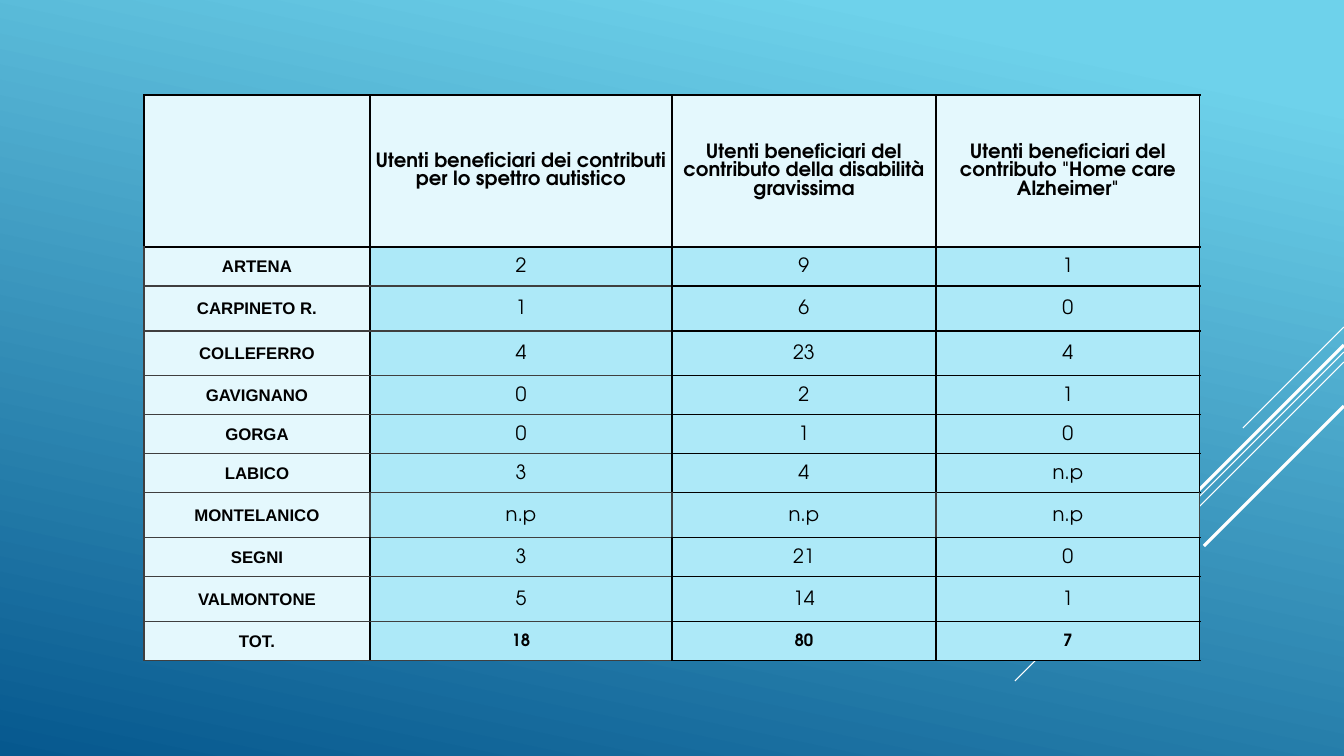
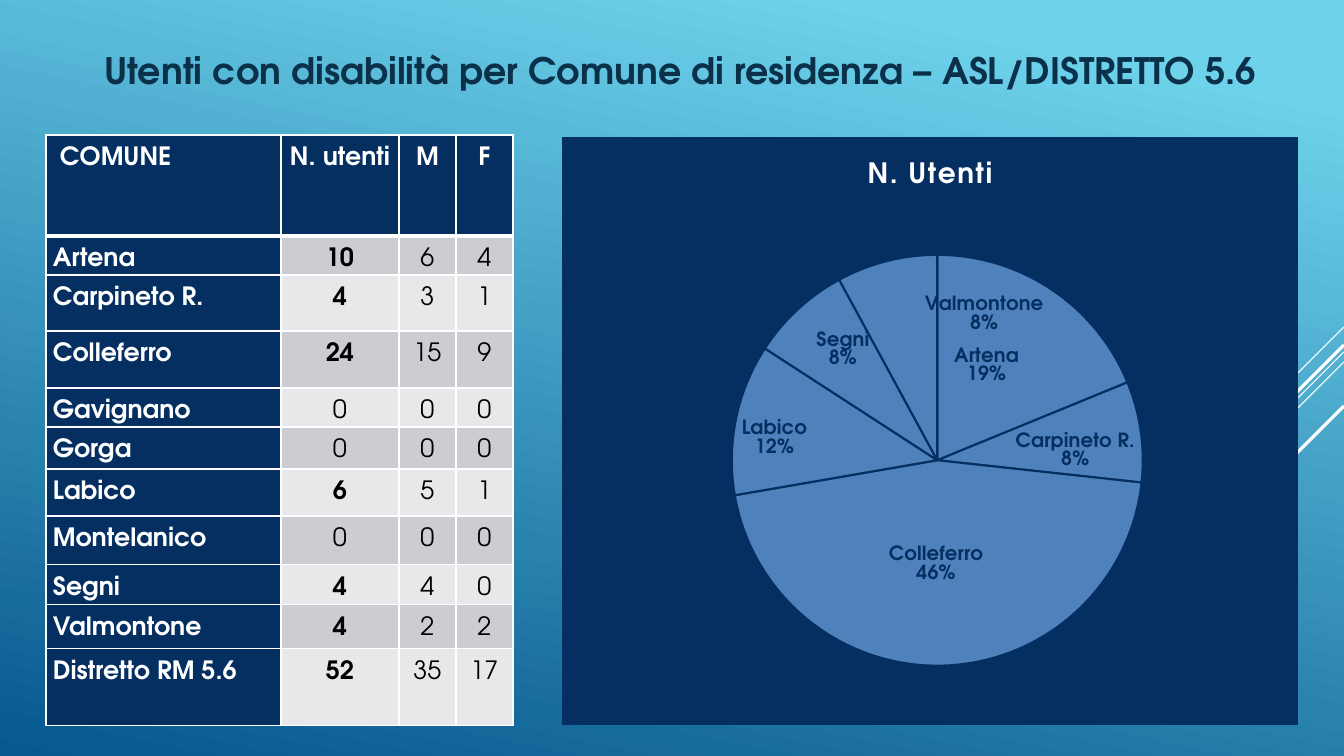
from copy import deepcopy

from pptx import Presentation, util as u
from pptx.chart.data import CategoryChartData
from pptx.dml.color import RGBColor
from pptx.enum import chart as chart_enum, shapes, text
from pptx.oxml import parse_xml
from pptx.oxml.ns import nsdecls

WIDTH, HEIGHT = 1344, 756
SCALE = 12192000 / WIDTH
FONT = "TeX Gyre Adventor"
BLACK, WHITE, GREY, NAVY, INK = "000000", "FFFFFF", "3F3F3F", "052F61", "0A304A"
PALE, AQUA = "E4F8FD", "ADE9F8"
BANDS = ["CCCDD2", "E7E8EA"]
color = RGBColor.from_string


def px(length):
    return u.Emu(round(length * SCALE))


def format_cell(cell, content, fill, borders, font, paragraph_format, **cell_format):
    """Fill one cell; borders maps L, R, T, B to (colour, width in points)."""
    properties = cell._tc.get_or_add_tcPr()
    for side in "LRTB":
        line_color, width = borders[side]
        properties.append(parse_xml(
            f'<a:ln{side} {nsdecls("a")} w="{u.Pt(width)}"><a:solidFill>'
            f'<a:srgbClr val="{line_color}"/></a:solidFill></a:ln{side}>'))
    cell.fill.solid()
    cell.fill.fore_color.rgb = color(fill)
    for name, value in cell_format.items():
        setattr(cell, name, value)
    cell.text = content
    paragraph = cell.text_frame.paragraphs[0]
    for name, value in paragraph_format.items():
        setattr(paragraph, name, value)
    size, bold, font_color, family = font
    for name, value in {"size": u.Pt(size), "bold": bold, "name": family}.items():
        setattr(paragraph.font, name, value)
    paragraph.font.color.rgb = color(font_color)


presentation = Presentation()
presentation.slide_width, presentation.slide_height = px(WIDTH), px(HEIGHT)
master = presentation.slide_master
benefit_slide = presentation.slides.add_slide(presentation.slide_layouts[6])
residence_slide = presentation.slides.add_slide(presentation.slide_layouts[5])

# Shared background and diagonal lines, kept on the master
background = master.background.fill
background.gradient()
background.gradient_angle = 258
for stop, position, stop_color in zip(background.gradient_stops, (0.1, 1), ("6ED2EB", "06588E")):
    stop.position = position
    stop.color.rgb = color(stop_color)

diagonals = [(327, 1243, 0.75), (352, 1015, 0.75), (362, 1135, 0.75),
             (345, 1151, 2.25), (406, 1204, 2.25)]
for number, (start_y, end_x, width) in enumerate(diagonals):
    end_y = start_y + WIDTH - end_x
    diagonal = benefit_slide.shapes.add_connector(
        shapes.MSO_CONNECTOR.STRAIGHT, px(WIDTH), px(start_y), px(end_x), px(end_y))
    diagonal.line.color.rgb = color(WHITE)
    diagonal.line.width = u.Pt(width)
    diagonal.element.spPr.append(parse_xml(f'<a:effectLst {nsdecls("a")}/>'))
    diagonal.element.nvCxnSpPr.cNvPr.set("id", str(20 + number))
    master.shapes.element.append(diagonal.element)

# Slide 1: beneficiaries by municipality
benefit_rows = [
    ("", "Utenti beneficiari dei contributi per lo spettro autistico",
     "Utenti beneficiari del contributo della disabilità gravissima",
     'Utenti beneficiari del contributo "Home care Alzheimer"'),
    ("ARTENA", "2", "9", "1"),
    ("CARPINETO R.", "1", "6", "0"),
    ("COLLEFERRO", "4", "23", "4"),
    ("GAVIGNANO", "0", "2", "1"),
    ("GORGA", "0", "1", "0"),
    ("LABICO", "3", "4", "n.p"),
    ("MONTELANICO", "n.p", "n.p", "n.p"),
    ("SEGNI", "3", "21", "0"),
    ("VALMONTONE", "5", "14", "1"),
    ("TOT.", "18", "80", "7"),
]
benefit_widths = [226, 302, 264, 264]
benefit_heights = [152, 39, 45, 45, 39, 39, 39, 45, 39, 45, 39]

# Slide 2: users by municipality
residence_rows = [
    ("COMUNE", "N. utenti", "M", "F"),
    ("Artena", "10", "6", "4"),
    ("Carpineto R.", "4", "3", "1"),
    ("Colleferro", "24", "15", "9"),
    ("Gavignano", "0", "0", "0"),
    ("Gorga", "0", "0", "0"),
    ("Labico", "6", "5", "1"),
    ("Montelanico", "0", "0", "0"),
    ("Segni", "4", "4", "0"),
    ("Valmontone", "4", "2", "2"),
    ("Distretto RM 5.6", "52", "35", "17"),
]
residence_widths = [235, 118, 57, 57]
residence_heights = [101, 39, 56, 57, 39, 42, 47, 49, 40, 44, 77]

tables = []
for slide, left, top, widths, heights in [
        (benefit_slide, 144, 95, benefit_widths, benefit_heights),
        (residence_slide, 46, 135, residence_widths, residence_heights)]:
    table = slide.shapes.add_table(
        len(heights), len(widths),
        *map(px, (left, top, sum(widths), sum(heights)))).table
    table.first_row = table.horz_banding = False
    for column, width in zip(table.columns, widths):
        column.width = px(width)
    for row, height in zip(table.rows, heights):
        row.height = px(height)
    tables.append(table)
benefit_table, residence_table = tables

for row, values in enumerate(benefit_rows):
    total = values[0] == "TOT."
    for column, value in enumerate(values):
        header, label = row == 0, column == 0
        across = GREY if row and column < 2 else BLACK
        side = GREY if values[0] == "MONTELANICO" else BLACK
        borders = {"L": (GREY if row and label else side, 1), "R": (side, 1),
                   "T": (BLACK if row == 1 else across, 1), "B": (across, 1)}
        font = (12 if row and (label or total) else 14, header or label or total,
                BLACK, "Arial" if label else FONT)
        format_cell(benefit_table.cell(row, column), value,
                    PALE if header or label else AQUA, borders, font,
                    {"alignment": text.PP_ALIGN.CENTER},
                    vertical_anchor=text.MSO_ANCHOR.MIDDLE, margin_left=px(1),
                    margin_right=px(1), margin_top=px(1), margin_bottom=0)

for row, values in enumerate(residence_rows):
    for column, value in enumerate(values):
        header, label = row == 0, column == 0
        navy = header or label
        borders = {"L": (WHITE, 1), "R": (WHITE, 1),
                   "T": (WHITE, 3 if row == 1 else 1), "B": (WHITE, 3 if header else 1)}
        font = (18, navy or (column == 1 and value != "0"), WHITE if navy else BLACK, FONT)
        alignment = text.PP_ALIGN.LEFT if label else text.PP_ALIGN.CENTER
        format_cell(residence_table.cell(row, column), value,
                    NAVY if navy else BANDS[(row - 1) % 2], borders, font,
                    {"alignment": alignment, "line_spacing": 1.5, "space_after": u.Pt(10)},
                    vertical_anchor=text.MSO_ANCHOR.TOP,
                    margin_left=px(14 if header and label else 7),
                    margin_right=px(7), margin_top=0, margin_bottom=0)

title = residence_slide.shapes.title
title.left, title.top, title.width, title.height = map(px, (40, 42, 1282, 56))
title.text_frame.text = "Utenti con disabilità per Comune di residenza – ASL/DISTRETTO 5.6"
for name, value in {"word_wrap": True, "auto_size": text.MSO_AUTO_SIZE.NONE,
                    "vertical_anchor": text.MSO_ANCHOR.MIDDLE}.items():
    setattr(title.text_frame, name, value)
title_paragraph = title.text_frame.paragraphs[0]
title_paragraph.alignment = text.PP_ALIGN.CENTER

# Pie chart of users
chart_data = CategoryChartData()
chart_data.categories = [values[0] for values in residence_rows[1:-1]]
shares = (19, 8, 46, 0, 0, 12, 0, 8, 8)
chart_data.add_series("N. Utenti", shares)
chart = residence_slide.shapes.add_chart(
    chart_enum.XL_CHART_TYPE.PIE, *map(px, (562, 137, 736, 588)), chart_data).chart
chart.has_legend = False
chart.has_title = True
chart.chart_title.text_frame.text = "N. Utenti"
chart_title_run = chart.chart_title.text_frame.paragraphs[0].runs[0]
chart_title_run._r.get_or_add_rPr().set("spc", "100")

plot = chart.plots[0]
plot.vary_by_categories = False
series = plot.series[0]
series.format.fill.solid()
series.format.fill.fore_color.rgb = color(WHITE)
series.format.line.color.rgb = color(NAVY)
series.format.line.width = u.Pt(1.5)
labels = series.data_labels
for name, value in {"show_percentage": True, "show_category_name": True, "show_value": False,
                    "position": chart_enum.XL_LABEL_POSITION.INSIDE_END}.items():
    setattr(labels, name, value)

for font, size, bold, font_color in [
        (title_paragraph.runs[0].font, 26, True, INK),
        (chart.font, 10, False, WHITE),
        (chart_title_run.font, 20, True, WHITE),
        (labels.font, 14, True, NAVY)]:
    for name, value in {"name": FONT, "size": u.Pt(size), "bold": bold}.items():
        setattr(font, name, value)
    font.color.rgb = color(font_color)

# Empty slices lose their label; some other labels are shifted
label_list = chart.element.xpath(".//c:ser/c:dLbls")[0]
label_list.xpath("c:showBubbleSize")[0].addnext(
    parse_xml(f'<c:separator {nsdecls("c")}>\n</c:separator>'))
label_parts = [part for part in label_list if not part.tag.endswith("showLeaderLines")]
label_shifts = {0: (-0.04, 0.09), 2: (-0.01, -0.13), 7: (0.02, 0.03), 8: (0.05, 0.05)}
position = 0
for index, share in enumerate(shares):
    if share and index not in label_shifts:
        continue
    if share:
        x, y = label_shifts[index]
        detail = (f'<c:layout><c:manualLayout><c:x val="{x}"/><c:y val="{y}"/>'
                  '</c:manualLayout></c:layout>')
    else:
        detail = '<c:delete val="1"/>'
    label = parse_xml(f'<c:dLbl {nsdecls("c")}><c:idx val="{index}"/>{detail}</c:dLbl>')
    if share:
        label.extend(deepcopy(part) for part in label_parts)
    label_list.insert(position, label)
    position += 1

plot_area = chart.element.xpath(".//c:plotArea")[0]
for layout in plot_area.xpath("c:layout"):
    plot_area.remove(layout)
sizes = "".join(f'<c:{name} val="{value}"/>' for name, value in
                {"x": 0.23, "y": 0.2, "w": 0.56, "h": 0.7}.items())
plot_area.insert(0, parse_xml(
    f'<c:layout {nsdecls("c")}><c:manualLayout><c:layoutTarget val="inner"/>'
    f'<c:xMode val="edge"/><c:yMode val="edge"/>{sizes}</c:manualLayout></c:layout>'))
solid_navy = f'<a:solidFill><a:srgbClr val="{NAVY}"/></a:solidFill>'
chart.element.xpath("c:chart")[0].addnext(parse_xml(
    f'<c:spPr {nsdecls("c", "a")}>{solid_navy}<a:ln w="{u.Pt(0.75)}">{solid_navy}</a:ln></c:spPr>'))

presentation.save("out.pptx")
